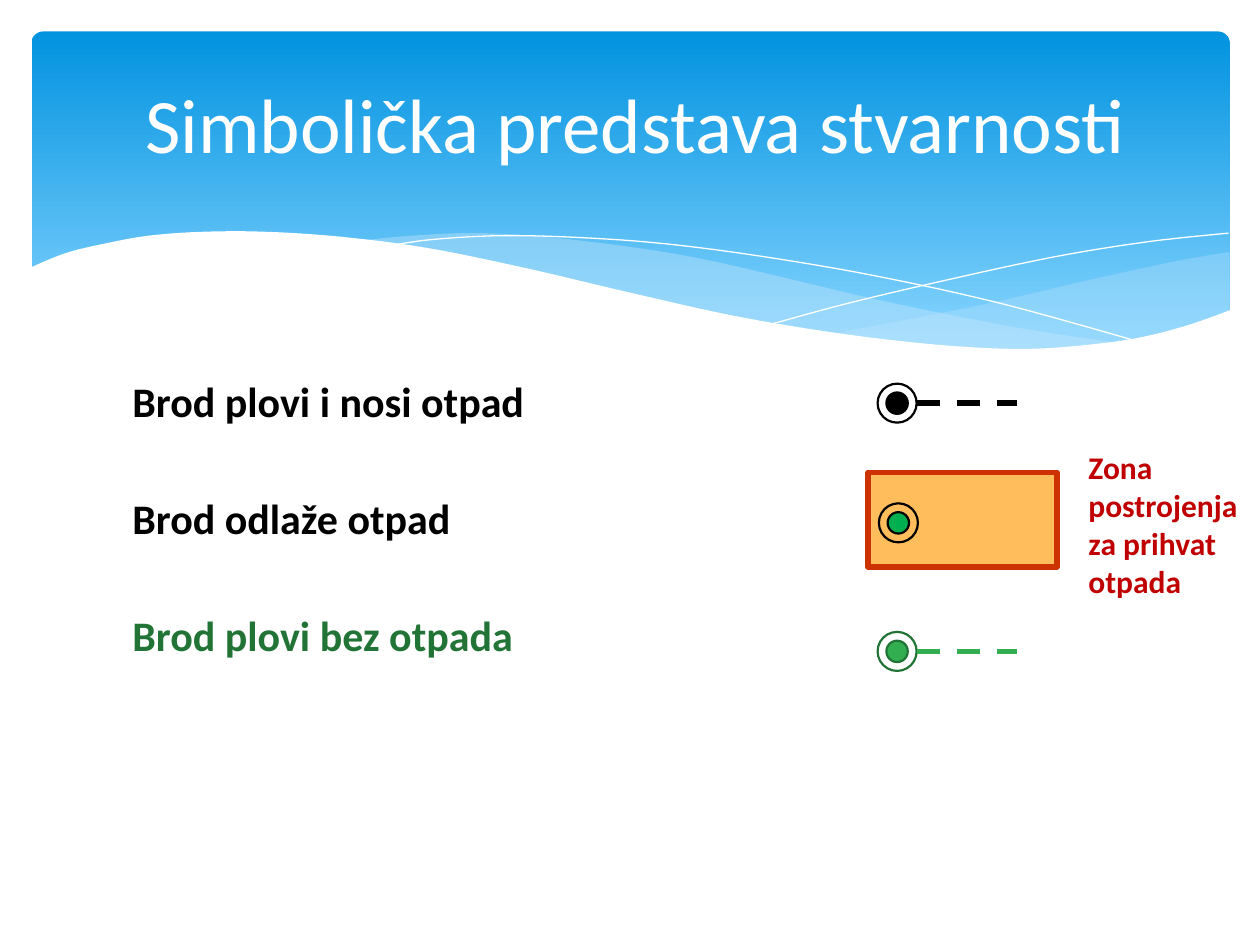
from lxml.etree import SubElement
from pptx import Presentation
from pptx.dml.color import RGBColor
from pptx.enum.dml import MSO_LINE
from pptx.enum.shapes import MSO_CONNECTOR, MSO_SHAPE
from pptx.enum.text import MSO_ANCHOR, MSO_AUTO_SIZE, PP_ALIGN
from pptx.oxml.ns import qn
from pptx.util import Inches, Pt

# Content
TITLE = "Simbolička predstava stvarnosti"
ROWS = [("Brod plovi i nosi otpad", "black"),
        ("Brod odlaže otpad", "black"),
        ("Brod plovi bez otpada", "green")]
ZONE = ["Zona postrojenja", "za prihvat otpada"]
FONT = "Calibri"
COLORS = {"black": "000000", "white": "FFFFFF", "green": "217436",
          "leaf": "32AE51", "lime": "00B050", "red": "C00000",
          "rust": "CC3300", "orange": "FF9900", "sky": "0293E0",
          "pale": "83D3FE", "mist": "C6E7FC"}

# Ships: centre x, centre y, dot colour, ring colour, wake drawn
SHIPS = [(7.12, 3.2, "black", "black", True),
         (7.12, 5.17, "leaf", "green", True),
         (7.13, 4.15, "lime", "black", False)]

# Banner waves: opacity in percent and the smooth edges of each band
BANDS = [
    (29, [[(9.76, 2), (9.35, 2.07), (8.61, 2.23), (7.79, 2.42), (6.61, 2.65)],
          [(6.61, 2.65), (7.19, 2.72), (7.69, 2.77), (8.14, 2.78),
           (8.63, 2.75), (9.13, 2.67), (9.49, 2.57), (9.76, 2.47)]]),
    (40, [[(8.93, 2.73), (8.07, 2.6), (7.06, 2.4), (6.29, 2.22), (5.69, 2.08),
           (5.14, 1.98), (4.42, 1.89), (3.8, 1.85), (3.28, 1.87), (2.86, 1.91)],
          [(2.86, 1.91), (3.42, 1.99), (4.04, 2.11), (4.91, 2.32), (5.66, 2.48),
           (6.34, 2.61), (6.95, 2.7), (7.48, 2.76), (8.07, 2.78), (8.93, 2.73)]]),
]
CURVES = [
    [(3.09, 1.95), (3.44, 1.9), (4.01, 1.87), (4.69, 1.89), (5.33, 1.94),
     (6.08, 2.04), (6.95, 2.19), (7.95, 2.41), (9.07, 2.72)],
    [(6.13, 2.57), (6.72, 2.41), (7.48, 2.23), (8.36, 2.04), (9.1, 1.92),
     (9.75, 1.85)],
]
SHORE = [(9.77, 2.46), (9.4, 2.59), (8.99, 2.69), (8.5, 2.75), (8.09, 2.77),
         (7.61, 2.75), (7.08, 2.7), (6.48, 2.62), (5.79, 2.5), (5.03, 2.33),
         (4.18, 2.13), (3.4, 1.97), (2.71, 1.88), (2.11, 1.84), (1.61, 1.84),
         (1.19, 1.87), (0.85, 1.93), (0.52, 2.01), (0.23, 2.13)]


def rgb(name):
    return RGBColor.from_string(COLORS[name])


def box(*nums):
    return [Inches(n) for n in nums]


def smooth(pts, steps=6):
    """Catmull-Rom curve through the points."""
    ends = [pts[0], *pts, pts[-1]]
    out = [pts[0]]
    for a, b, c, d in zip(ends, ends[1:], ends[2:], ends[3:]):
        for i in range(1, steps + 1):
            t = i / steps
            out.append(tuple(
                (2 * q + (r - p) * t + (2 * p - 5 * q + 4 * r - s) * t ** 2
                 + (3 * q - p - 3 * r + s) * t ** 3) / 2
                for p, q, r, s in zip(a, b, c, d)))
    return out


def paint(shape, fill=None, alpha=None, line=None, width=0):
    shape.shadow.inherit = False
    if fill:
        shape.fill.solid()
        shape.fill.fore_color.rgb = rgb(fill)
        if alpha:
            tint = shape.element.spPr.find(qn("a:solidFill"))[0]
            SubElement(tint, qn("a:alpha"), val=str(alpha * 1000))
    else:
        shape.fill.background()
    if line:
        shape.line.color.rgb = rgb(line)
        shape.line.width = Pt(width)
    else:
        shape.line.fill.background()


def trace(pts, close=True):
    pts = [box(*p) for p in pts]
    pen = shapes.build_freeform(*pts[0], scale=1.0)
    pen.add_line_segments(pts[1:], close=close)
    return pen.convert_to_shape()


def write(frame, texts, size, color, bold=False):
    for i, text in enumerate(texts):
        para = frame.add_paragraph() if i else frame.paragraphs[0]
        para.text = text
        font = para.font
        font.name, font.size, font.bold = FONT, Pt(size), bold
        font.color.rgb = rgb(color)


deck = Presentation()
deck.slide_width, deck.slide_height = box(10, 7.5)
slide = deck.slides.add_slide(deck.slide_layouts[1])
shapes = slide.shapes
title, body = slide.placeholders

# Banner
banner = shapes.add_shape(MSO_SHAPE.ROUNDED_RECTANGLE,
                          *box(0.25, 0.25, 9.51, 2.7))
banner.adjustments[0] = 0.034
paint(banner)
banner.fill.gradient()
banner.fill.gradient_angle = 270
for stop, (place, name) in zip(banner.fill.gradient_stops,
                               [(0, "sky"), (0.9, "pale")]):
    stop.position = place
    stop.color.rgb = rgb(name)
for alpha, edges in BANDS:
    paint(trace([p for edge in edges for p in smooth(edge)]), "mist", alpha)
for curve in CURVES:
    paint(trace(smooth(curve), close=False), line="white")
paint(trace(smooth(SHORE) + [(0.23, 3.29), (9.77, 3.29)]), "white")

# Reception zone
zone = shapes.add_shape(MSO_SHAPE.RECTANGLE, *box(6.89, 3.75, 1.5, 0.75))
paint(zone, "orange", 64, "rust", 3.25)

# Title and row labels, in front of the banner
for holder, place in [(body, (0.95, 2.93, 6.72, 2.79)),
                      (title, (0.28, 0.21, 9.53, 1.18))]:
    holder.left, holder.top, holder.width, holder.height = box(*place)
    holder.text_frame.auto_size = MSO_AUTO_SIZE.NONE
    shapes.element.append(holder.element)
write(title.text_frame, [TITLE], 44, "white")
title.text_frame.vertical_anchor = MSO_ANCHOR.BOTTOM
title.text_frame.paragraphs[0].alignment = PP_ALIGN.CENTER
write(body.text_frame, [text for text, _ in ROWS], 24, "black", True)
for i, (para, (_, color)) in enumerate(zip(body.text_frame.paragraphs, ROWS)):
    para.font.color.rgb = rgb(color)
    para.space_before = Pt(38 if i else 0)
    props = para._p.get_or_add_pPr()
    props.set("marL", "0")
    props.set("indent", "0")
    bullet = SubElement(props, qn("a:buNone"))
    props.find(qn("a:defRPr")).addprevious(bullet)

# Ships with their wakes
for x, y, dot, ring, wake in SHIPS:
    for size, fill in [(0.17, dot), (0.31, None)]:
        disc = shapes.add_shape(MSO_SHAPE.OVAL, *box(
            x - size / 2, y - size / 2, size, size))
        paint(disc, fill, line=ring, width=1.25)
    if wake:
        dash = shapes.add_connector(MSO_CONNECTOR.STRAIGHT,
                                    *box(7.28, y, 8.07, y))
        dash.line.color.rgb = rgb(dot)
        dash.line.width = Pt(3.25)
        dash.line.dash_style = MSO_LINE.DASH
        SubElement(dash.element.spPr, qn("a:effectLst"))

# Zone caption
note = shapes.add_textbox(*box(8.54, 3.51, 1.46, 1.31)).text_frame
note.word_wrap = True
write(note, ZONE, 18, "red", True)

deck.save("out.pptx")
